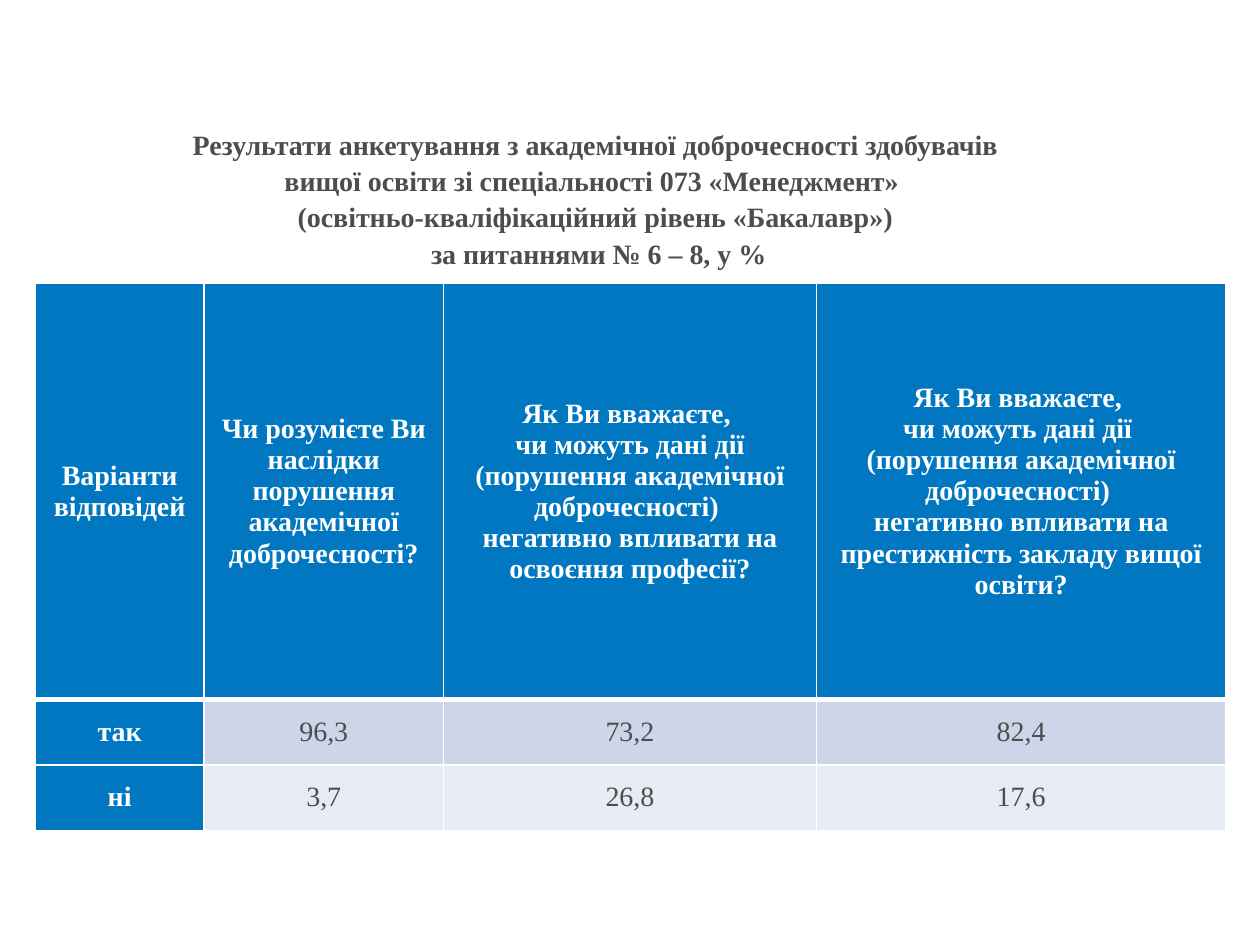
from lxml.etree import SubElement
from pptx import Presentation
from pptx.dml.color import RGBColor
from pptx.enum.text import MSO_ANCHOR, PP_ALIGN
from pptx.oxml.ns import qn
from pptx.util import Inches, Pt

WHITE = RGBColor(0xFF, 0xFF, 0xFF)
GRAY = RGBColor(0x4D, 0x4D, 0x4D)
BLUE = RGBColor(0x00, 0x77, 0xC0)
BANDS = [RGBColor(0xCC, 0xD6, 0xE8), RGBColor(0xE7, 0xEC, 0xF4)]

TITLE = (
    "Результати анкетування з академічної доброчесності здобувачів вищої освіти "
    "зі спеціальності 073 «Менеджмент» \v"
    "(освітньо-кваліфікаційний рівень «Бакалавр»)\v"
    " за питаннями № 6 – 8, у %"
)
ROWS = [
    [
        "Варіанти відповідей",
        "Чи розумієте Ви наслідки порушення академічної доброчесності?",
        "Як Ви вважаєте, \nчи можуть дані дії (порушення академічної доброчесності) \n"
        "негативно впливати на освоєння професії?",
        "Як Ви вважаєте, \nчи можуть дані дії \n(порушення академічної доброчесності) \n"
        "негативно впливати на престижність закладу вищої освіти?",
    ],
    ["так", "96,3", "73,2", "82,4"],
    ["ні", "3,7", "26,8", "17,6"],
]
COLUMN_WIDTHS = [1.34, 1.9, 2.96, 3.25]
ROW_HEIGHTS = [3.3, 0.52, 0.52]


class SurveySlide:
    """Holds the text style and the current page, and adds elements to it."""

    def __init__(self, page, font_name="Times New Roman", size=16):
        self.page = page
        self.font_name = font_name
        self.size = Pt(size)

    def set_text(self, frame, text, color, bold, spacing=None):
        frame.word_wrap = True
        frame.text = text
        for para in frame.paragraphs:
            para.alignment = PP_ALIGN.CENTER
            para.line_spacing = spacing
            para.font.name = self.font_name
            para.font.size = self.size
            para.font.bold = bold
            para.font.color.rgb = color

    def title(self, text, left, top, width, height):
        box = self.page.shapes.add_textbox(
            Inches(left), Inches(top), Inches(width), Inches(height)
        )
        box.text_frame.vertical_anchor = MSO_ANCHOR.BOTTOM
        self.set_text(box.text_frame, text, GRAY, True, 1.08)

    def border(self, cell, side, points):
        properties = cell._tc.get_or_add_tcPr()
        line = SubElement(properties, qn(f"a:{side}"), w=str(Pt(points)))
        fill = SubElement(line, qn("a:solidFill"))
        SubElement(fill, qn("a:srgbClr"), val=str(WHITE))

    def cell(self, cell, text, row, column):
        heading = row == 0 or column == 0
        cell.margin_left = cell.margin_right = Inches(0.07)
        cell.margin_top = cell.margin_bottom = 0
        cell.vertical_anchor = MSO_ANCHOR.MIDDLE
        self.set_text(cell.text_frame, text, WHITE if heading else GRAY, heading)
        thickness = {"lnL": 1, "lnR": 1, "lnT": 3 if row == 1 else 1, "lnB": 3 if row == 0 else 1}
        for side, points in thickness.items():
            self.border(cell, side, points)
        cell.fill.solid()
        cell.fill.fore_color.rgb = BLUE if heading else BANDS[row - 1]

    def table(self, rows, left, top, widths, heights):
        table = self.page.shapes.add_table(
            len(rows), len(widths), Inches(left), Inches(top),
            Inches(sum(widths)), Inches(sum(heights)),
        ).table
        table.first_col = True
        for column, width in zip(table.columns, widths):
            column.width = Inches(width)
        for row, height in zip(table.rows, heights):
            row.height = Inches(height)
        for row, texts in enumerate(rows):
            for column, text in enumerate(texts):
                self.cell(table.cell(row, column), text, row, column)


def main():
    deck = Presentation()
    deck.slide_width, deck.slide_height = Inches(10), Inches(7.5)
    survey = SurveySlide(deck.slides.add_slide(deck.slide_layouts[6]))
    survey.title(TITLE, 1.14, 0.92, 7.17, 1.27)
    survey.table(ROWS, 0.28, 2.25, COLUMN_WIDTHS, ROW_HEIGHTS)
    deck.save("out.pptx")


if __name__ == "__main__":
    main()
